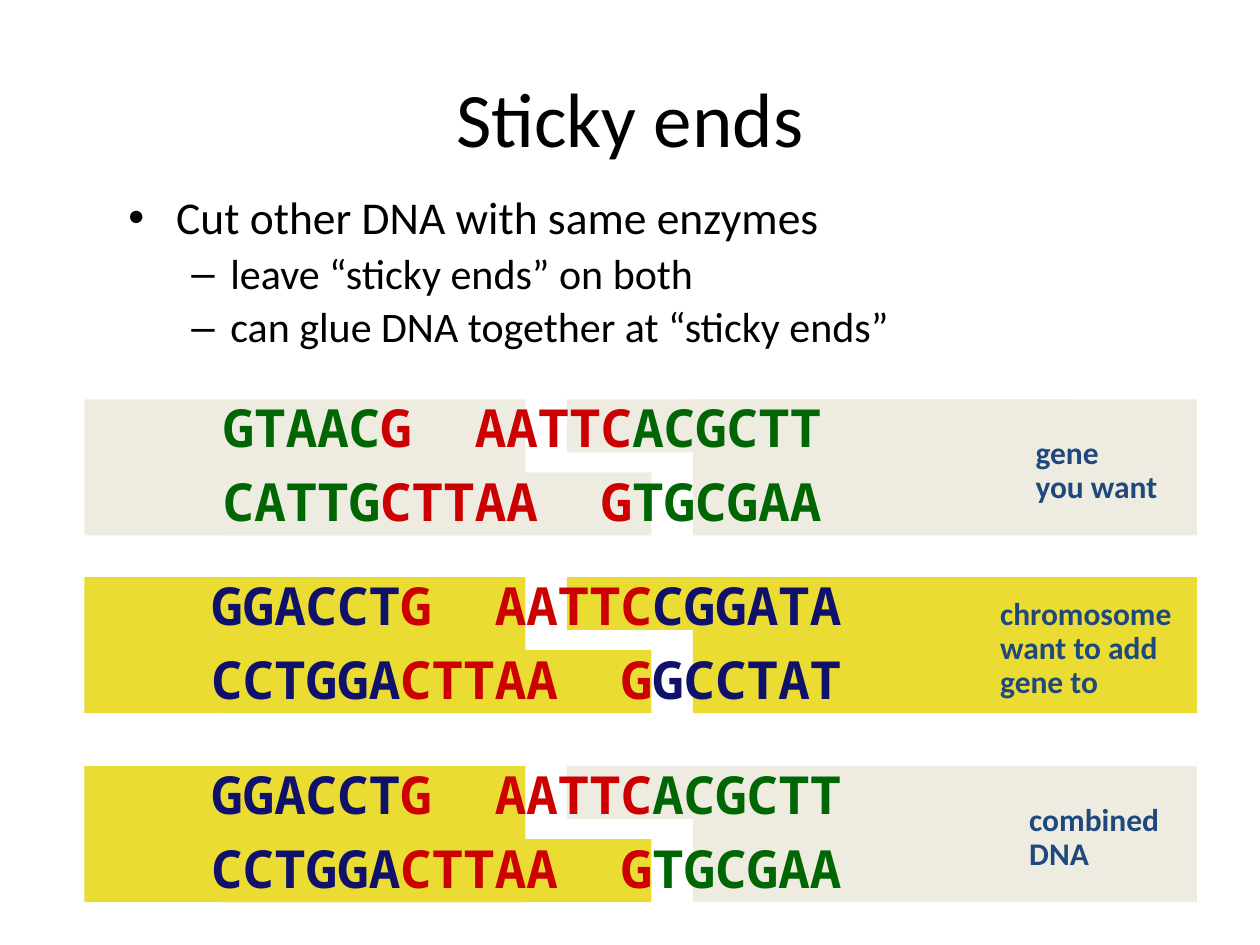
from lxml.etree import SubElement
from pptx import Presentation
from pptx.dml.color import RGBColor
from pptx.enum.shapes import MSO_SHAPE
from pptx.enum.text import MSO_ANCHOR, PP_ALIGN
from pptx.oxml.ns import qn
from pptx.util import Inches, Pt

THEME = {
    "text_font": "Calibri", "strand_font": "Noto Sans Mono",
    "title_size": 44, "strand_size": 30, "label_size": 18,
    "black": "000000", "label": "1F497D",
    "gene": "006604", "chromosome": "0F116A", "sticky": "CC0000",
    "beige": "EEECE1", "yellow": "EBDC34",
}

TITLE = "Sticky ends"
BULLETS = [
    ("•", 26, 0.38, 0.38, "Cut other DNA with same enzymes"),
    ("–", 24, 0.81, 0.31, "leave “sticky ends” on both"),
    ("–", 24, 0.81, 0.31, "can glue DNA together at “sticky ends”"),
]
STICKY_ENDS = ["G  AATTC", "CTTAA  G"]
MOLECULES = [
    {"top": 3.17, "fills": ("beige", "beige"), "colors": ("gene", "gene"),
     "left": ["GTAAC", "CATTG"], "right": ["ACGCTT", "TGCGAA"], "strand_left": 1.67,
     "label": ["gene ", "you want"], "label_box": (8.12, 0.25, 1.28, 0.64)},
    {"top": 4.58, "fills": ("yellow", "yellow"), "colors": ("chromosome", "chromosome"),
     "left": ["GGACCT", "CCTGGA"], "right": ["CGGATA", "GCCTAT"], "strand_left": 1.58,
     "label": ["chromosome ", "want to add ", "gene to"], "label_box": (7.84, 0.12, 1.84, 0.91)},
    {"top": 6.08, "fills": ("yellow", "beige"), "colors": ("chromosome", "gene"),
     "left": ["GGACCT", "CCTGGA"], "right": ["ACGCTT", "TGCGAA"], "strand_left": 1.58,
     "label": ["combined", "DNA"], "label_box": (8.07, 0.25, 1.38, 0.64)},
]
BLOCKS = [
    (1, 4.5, 0, 4, 0.42),
    (0, 1.75, 0.58, 3.42, 0.5),
    (1, 5.5, 0, 4, 1.08),
    (0, 0.67, 0, 3.5, 1.08),
]


def add_text_frame(shapes, box, anchor=MSO_ANCHOR.MIDDLE, wrap=True):
    frame = shapes.add_textbox(*map(Inches, box)).text_frame
    frame.word_wrap = wrap
    frame.vertical_anchor = anchor
    return frame


def next_paragraph(frame, index):
    return frame.add_paragraph() if index else frame.paragraphs[0]


def add_run(paragraph, text, size, color, font="text_font", bold=False):
    run = paragraph.add_run()
    run.text = text
    run.font.name = THEME[font]
    run.font.size = Pt(size)
    run.font.bold = bold
    run.font.color.rgb = RGBColor.from_string(THEME[color])


def add_bullets(shapes):
    frame = add_text_frame(shapes, (0.92, 1.5, 8.5, 1.92), MSO_ANCHOR.TOP)
    for index, (mark, size, margin, hanging, text) in enumerate(BULLETS):
        paragraph = next_paragraph(frame, index)
        paragraph.level = min(index, 1)
        paragraph.line_spacing = 0.9
        paragraph.space_before = Pt(size * 0.2)
        properties = paragraph._p.get_or_add_pPr()
        properties.set("marL", str(Inches(margin)))
        properties.set("indent", str(-Inches(hanging)))
        SubElement(properties, qn("a:buFont")).set("typeface", "Arial")
        SubElement(properties, qn("a:buChar")).set("char", mark)
        add_run(paragraph, text, size, "black")


def add_molecule(shapes, molecule):
    top = molecule["top"]
    for side, left, offset, width, height in BLOCKS:
        block = shapes.add_shape(
            MSO_SHAPE.RECTANGLE, *map(Inches, (left, top + offset, width, height)))
        block.shadow.inherit = False
        block.fill.solid()
        block.fill.fore_color.rgb = RGBColor.from_string(THEME[molecule["fills"][side]])
        block.line.fill.background()

    frame = add_text_frame(shapes, (molecule["strand_left"], top - 0.08, 6.58, 1.18))
    left_color, right_color = molecule["colors"]
    strands = zip(molecule["left"], STICKY_ENDS, molecule["right"])
    for index, strand in enumerate(strands):
        paragraph = next_paragraph(frame, index)
        paragraph.space_after = Pt(0 if index else 6)
        for text, color in zip(strand, (left_color, "sticky", right_color)):
            add_run(paragraph, text, THEME["strand_size"], color, "strand_font", True)

    left, offset, width, height = molecule["label_box"]
    frame = add_text_frame(shapes, (left, top + offset, width, height), wrap=False)
    paragraph = frame.paragraphs[0]
    paragraph.line_spacing = 0.9
    for index, line in enumerate(molecule["label"]):
        if index:
            paragraph.add_line_break()
        add_run(paragraph, line, THEME["label_size"], "label", bold=True)


def main():
    """Build the sticky ends slide."""
    presentation = Presentation()
    presentation.slide_width = Inches(10)
    presentation.slide_height = Inches(7.5)
    slide = presentation.slides.add_slide(presentation.slide_layouts[6])
    title = add_text_frame(slide.shapes, (0.5, 0.3, 9, 1.25)).paragraphs[0]
    title.alignment = PP_ALIGN.CENTER
    add_run(title, TITLE, THEME["title_size"], "black")
    add_bullets(slide.shapes)
    for molecule in MOLECULES:
        add_molecule(slide.shapes.add_group_shape().shapes, molecule)
    presentation.save("out.pptx")


if __name__ == "__main__":
    main()
